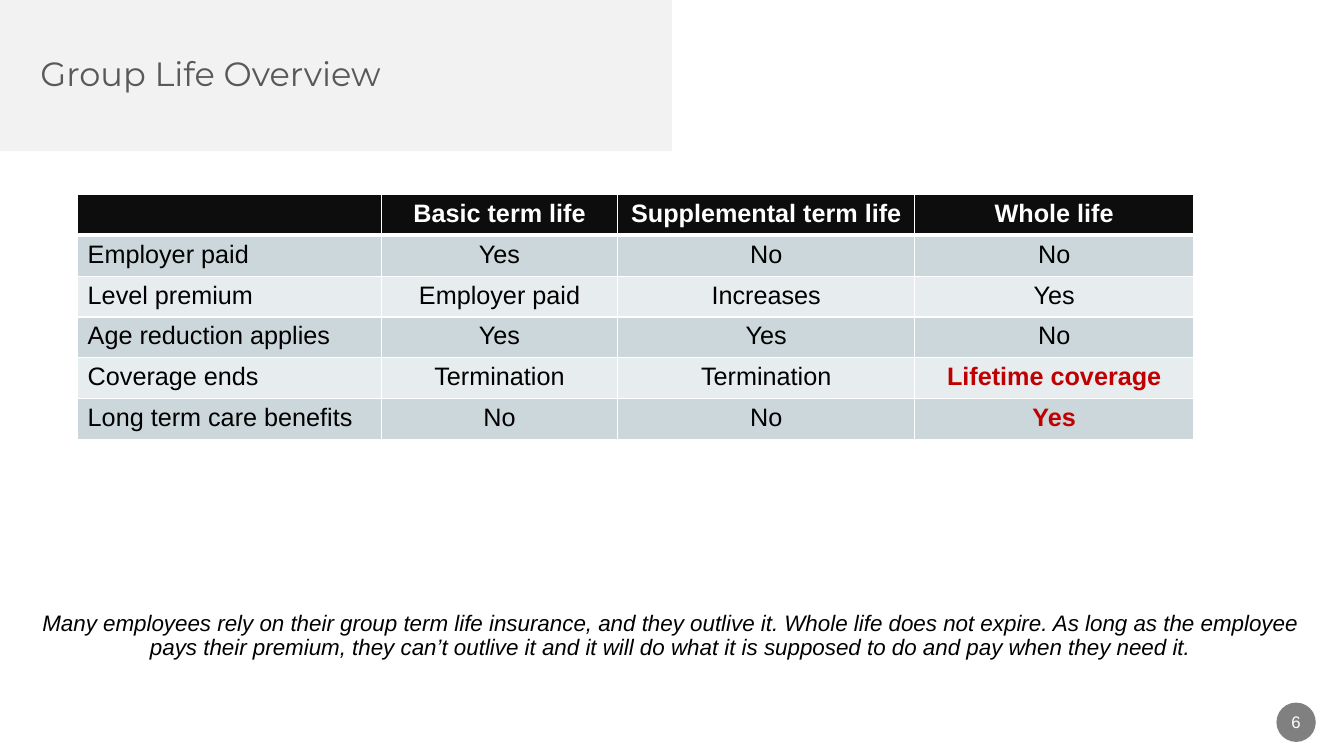
from lxml.etree import SubElement
from pptx import Presentation
from pptx.dml.color import RGBColor
from pptx.enum.shapes import MSO_SHAPE as Shape
from pptx.enum.text import MSO_ANCHOR as Anchor, MSO_AUTO_SIZE as AutoSize, PP_ALIGN as Align
from pptx.oxml.ns import qn
from pptx.util import Inches, Pt

W, H = 13.33, 7.5
COLORS = {"panel": "F2F2F2", "title": "595959", "badge": "808080", "header": "0D0D0D",
          "odd": "CCD7DC", "even": "E7ECEE", "white": "FFFFFF", "black": "000000",
          "accent": "C00000"}
COLUMN_SHARES = (0.272, 0.212, 0.266, 0.25)
ROWS = (
    ("", "Basic term life", "Supplemental term life", "Whole life"),
    ("Employer paid", "Yes", "No", "No"),
    ("Level premium", "Employer paid", "Increases", "Yes"),
    ("Age reduction applies", "Yes", "Yes", "No"),
    ("Coverage ends", "Termination", "Termination", "Lifetime coverage"),
    ("Long term care benefits", "No", "No", "Yes"),
)
HIGHLIGHTS = {(4, 3), (5, 3)}
NOTE = ("Many employees rely on their group term life insurance, and they outlive it. "
        "Whole life does not expire. As long as the employee pays their premium, they "
        "can’t outlive it and it will do what it is supposed to do and pay when they need it.")


def rgb(name):
    return RGBColor.from_string(COLORS[name])


def write(tf, text, size=18, color="black", font="Arial", bold=False, italic=False,
          align=Align.LEFT, spacing=1.0):
    p = tf.paragraphs[0]
    p.alignment, p.line_spacing, p.space_before = align, spacing, Pt(0)
    r = p.add_run()
    r.text = text
    f = r.font
    f.name, f.size, f.bold, f.italic = font, Pt(size), bold, italic
    f.color.rgb = rgb(color)
    return p


def place(sp, box):
    sp.left, sp.top, sp.width, sp.height = map(Inches, box)


def prepare_frame(sp, anchor):
    tf = sp.text_frame
    tf.word_wrap, tf.auto_size, tf.vertical_anchor = True, AutoSize.NONE, anchor
    return tf


def add_plain_shape(s, kind, box, color):
    sp = s.shapes.add_shape(kind, *map(Inches, box))
    sp.shadow.inherit = False
    sp.fill.solid()
    sp.fill.fore_color.rgb = rgb(color)
    sp.line.fill.background()
    return sp


def add_heading(s, box):
    x, y, w, h = box
    panel = add_plain_shape(s, Shape.RECTANGLE, box, "panel")
    title = s.shapes.title
    title.element.addprevious(panel.element)
    place(title, (x + 0.3, y + 0.1, w - 0.66, h - 0.2))
    write(prepare_frame(title, Anchor.MIDDLE), "Group Life Overview", size=24,
          color="title", font="Montserrat", spacing=0.9)


def add_note(s, box):
    body = s.placeholders[1]
    place(body, box)
    tf = prepare_frame(body, Anchor.BOTTOM)
    tf.margin_bottom = Inches(0.38)
    p = write(tf, NOTE, size=16, italic=True, align=Align.CENTER, spacing=0.9)
    pPr = p._p.get_or_add_pPr()
    pPr.set("marL", "0")
    pPr.set("indent", "0")
    SubElement(pPr, qn("a:buNone"))


def style_cell(cell, fill, bottom):
    """Draw white borders, then fill, in the order the schema asks for."""
    tcPr = cell._tc.get_or_add_tcPr()
    for side, width in (("L", 1), ("R", 1), ("T", 1), ("B", bottom)):
        ln = SubElement(tcPr, qn(f"a:ln{side}"), w=str(Pt(width)))
        SubElement(SubElement(ln, qn("a:solidFill")), qn("a:srgbClr"), val=COLORS["white"])
    cell.fill.solid()
    cell.fill.fore_color.rgb = rgb(fill)


def add_comparison(s, box):
    table = s.shapes.add_table(len(ROWS), len(COLUMN_SHARES), *map(Inches, box)).table
    for column, share in zip(table.columns, COLUMN_SHARES):
        column.width = Inches(box[2] * share)
    for i, row in enumerate(ROWS):
        table.rows[i].height = Inches(box[3] / len(ROWS))
        header = i == 0
        fill = "header" if header else "odd" if i % 2 else "even"
        for j, text in enumerate(row):
            cell = table.cell(i, j)
            style_cell(cell, fill, 3 if header else 1)
            strong = (i, j) in HIGHLIGHTS
            write(cell.text_frame, text, bold=header or strong,
                  color="white" if header else "accent" if strong else "black",
                  align=Align.CENTER if j else Align.LEFT)


def add_page_number(s, box):
    x, y, w, h = box
    add_plain_shape(s, Shape.OVAL, box, "badge")
    sp = s.shapes.add_textbox(*map(Inches, (x - 0.09, y - 0.01, w + 0.18, h + 0.01)))
    write(prepare_frame(sp, Anchor.MIDDLE), "6", size=12, color="white", align=Align.CENTER)


def main():
    prs = Presentation()
    prs.slide_width, prs.slide_height = Inches(W), Inches(H)
    s = prs.slides.add_slide(prs.slide_layouts[1])
    add_heading(s, (0, 0, W / 2, H / 5))
    add_note(s, (0.3, 1.8, W - 0.63, 5.13))
    add_comparison(s, (0.77, 1.93, 11.07, 2.43))
    add_page_number(s, (12.66, 6.97, 0.39, 0.39))
    prs.save("out.pptx")


if __name__ == "__main__":
    main()
